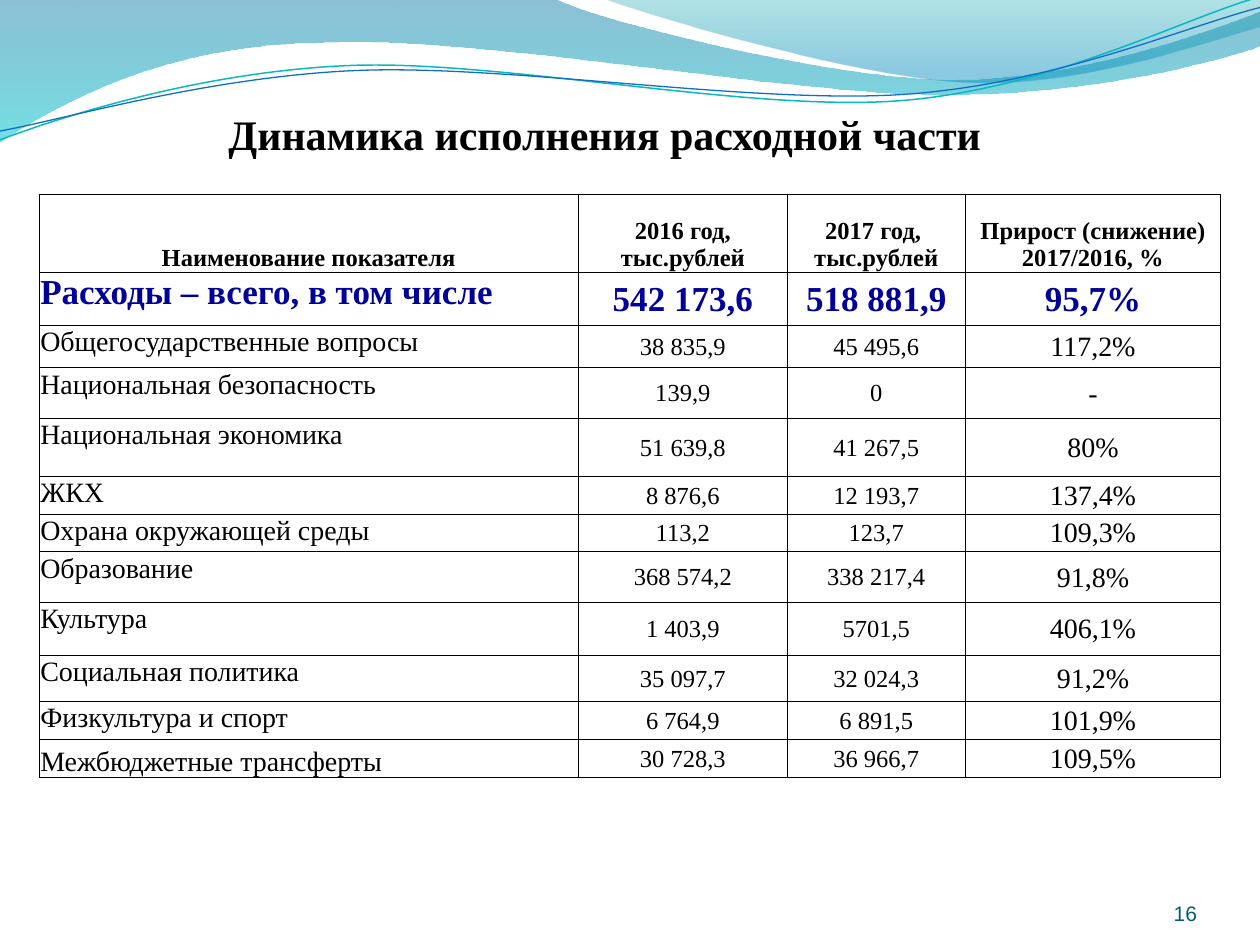
"""Build the slide on the execution of budget expenditure."""
import math

from lxml import etree
from pptx import Presentation
from pptx import util as u
from pptx.dml.color import RGBColor
from pptx.enum import text
from pptx.oxml.ns import qn

COLS, ROWS = 1000, 750
CELL = u.Inches(10) // COLS
SERIF, SANS = "Times New Roman", "Arial"
BLACK, NAVY = RGBColor(0, 0, 0), RGBColor(0x00, 0x00, 0x99)
PAGE = RGBColor(0x04, 0x5D, 0x75)
DEEP, CYAN = RGBColor(0x00, 0x74, 0xA1), RGBColor(0x00, 0xC6, 0xCF)
TEAL, SKY = RGBColor(0x00, 0xA1, 0xA9), RGBColor(0x00, 0x8B, 0xBF)
TURQUOISE, BLUE = RGBColor(0x0A, 0xB8, 0xBF), RGBColor(0x0F, 0x6F, 0xC6)
LEFT, CENTER, RIGHT, JUSTIFY = (getattr(text.PP_ALIGN, n) for n in
                                ("LEFT", "CENTER", "RIGHT", "JUSTIFY"))
TOP, MIDDLE, BOTTOM = (getattr(text.MSO_ANCHOR, n) for n in ("TOP", "MIDDLE", "BOTTOM"))

WAVES = [
    ([(0, -1), (440, -1), (476, 17, 664, 63, 758, 63), (853, 63, 958, 26, 1000, 9),
      (1001, 36), (983, 44, 870, 76, 746, 75), (622, 75, 382, 28, 257, 34),
      (129, 35, 46, 83, -1, 113), (0, -1)], [(0, DEEP, 45), (1, CYAN, 55)]),
    ([(479, -1), (509, 11, 682, 62, 769, 65), (856, 69, 961, 32, 1000, 21), (1000, 0),
      (479, -1)], [(0, TEAL, 30), (0.8, SKY, 45)]),
]
TILT = -2.7
LINES = [
    ([(0, 111), (48, 93, 158, 57, 277, 52), (395, 47, 593, 89, 713, 80),
      (833, 71, 938, 15, 998, -2)], (499, 57), TURQUOISE, 0.85),
    ([(0, 104), (47, 96, 164, 61, 283, 56), (403, 51, 597, 83, 717, 75),
      (836, 67, 941, 21, 1000, 6)], (500, 58), BLUE, 0.75),
]
TABLE_AT = (31, 154)
COL_WIDTHS = [428, 166, 141, 203]
ROW_HEIGHTS = [62, 42, 34, 40, 46, 30, 30, 40, 42, 37, 30, 30]
DATA = [
    ["Наименование показателя", "2016 год, тыс.рублей", "2017 год, \nтыс.рублей",
     "Прирост (снижение) 2017/2016, %"],
    ["Расходы – всего, в том числе", "542 173,6", "518 881,9", "95,7%"],
    ["Общегосударственные вопросы", "38 835,9", "45 495,6", "117,2%"],
    ["Национальная безопасность", "139,9", "0", "-"],
    ["Национальная экономика", "51 639,8", "41 267,5", "80%"],
    ["ЖКХ", "8 876,6", "12 193,7", "137,4%"],
    ["Охрана окружающей среды", "113,2", "123,7", "109,3%"],
    ["Образование", "368 574,2", "338 217,4", "91,8%"],
    ["Культура", "1 403,9", "5701,5", "406,1%"],
    ["Социальная политика", "35 097,7", "32 024,3", "91,2%"],
    ["Физкультура и спорт", "6 764,9", "6 891,5", "101,9%"],
    ["Межбюджетные трансферты", "30 728,3", "36 966,7", "109,5%"],
]


def set_attrs(obj, values):
    """Set every attribute in a dict of values."""
    for name, value in values.items():
        setattr(obj, name, value)


def write(tf, content, align, color, **font):
    """Fill a text frame, one paragraph a line."""
    tf.text = content
    for p in tf.paragraphs:
        p.alignment = align
        for r in p.runs:
            set_attrs(r.font, font)
            r.font.color.rgb = color


def turn(points, center, degrees):
    """Turn points clockwise about a center."""
    (cx, cy), a = center, math.radians(degrees)
    return [(cx + (x - cx) * math.cos(a) - (y - cy) * math.sin(a),
             cy + (x - cx) * math.sin(a) + (y - cy) * math.cos(a)) for x, y in points]


def add_curve(s, path, close, center=(0, 0), tilt=0):
    """Draw a path of corners and cubic curves as a freeform."""
    flat = [part[i:i + 2] for part in path for i in range(0, len(part), 2)]
    points = [(round(x * CELL), round(y * CELL)) for x, y in turn(flat, center, -tilt)]
    builder = s.shapes.build_freeform(*points[0])
    builder.add_line_segments(points[1:], close=close)
    sp = builder.convert_to_shape()
    sp.shadow.inherit = False
    sp.rotation = tilt
    segments = iter(list(sp._element.spPr.iter(qn("a:lnTo"))))
    for part in path[1:]:
        first = next(segments)
        if len(part) == 6:
            first.tag = qn("a:cubicBezTo")
            for _ in range(2):
                extra = next(segments)
                first.append(extra[0])
                extra.getparent().remove(extra)
    return sp


def add_wave(s, path, stops):
    """Add a closed wave with a translucent vertical gradient."""
    sp = add_curve(s, path, True)
    sp.line.fill.background()
    sp.fill.gradient()
    sp.fill.gradient_angle = 270
    for stop, (position, color, _) in zip(sp.fill.gradient_stops, stops):
        stop.position = position
        stop.color.rgb = color
    for clr, (_, _, opacity) in zip(sp._element.spPr.iter(qn("a:srgbClr")), stops):
        etree.SubElement(clr, qn("a:alpha"), val=str(opacity * 1000))


def add_line(s, path, center, color, width):
    """Add an open tilted curve."""
    sp = add_curve(s, path, False, center, TILT)
    sp.fill.background()
    sp.line.color.rgb = color
    sp.line.width = u.Pt(width)


def add_label(s, box, content, align, anchor, color, **font):
    """Add a text box without margins."""
    tf = s.shapes.add_textbox(*(v * CELL for v in box)).text_frame
    set_attrs(tf, dict(word_wrap=True, vertical_anchor=anchor, margin_left=0,
                       margin_top=0, margin_right=0, margin_bottom=0))
    write(tf, content, align, color, **font)


def add_borders(cell):
    """Give a cell thin black borders."""
    tc_pr = cell._tc.get_or_add_tcPr()
    for side in ("lnL", "lnR", "lnT", "lnB"):
        ln = etree.SubElement(tc_pr, qn(f"a:{side}"), w=str(u.Pt(0.5)))
        fill = etree.SubElement(ln, qn("a:solidFill"))
        etree.SubElement(fill, qn("a:srgbClr"), val=str(BLACK))


def cell_format(row, col):
    """Return alignment, anchor, size and colour for a table cell."""
    if row == 0:
        return CENTER, BOTTOM, 14, BLACK
    last = row == len(DATA) - 1
    align, anchor = CENTER, MIDDLE
    if col == 0:
        align = LEFT if row == 1 or last else JUSTIFY
        anchor = BOTTOM if last else TOP
    if row == 1:
        return align, anchor, 20, NAVY
    return align, anchor, 16 if col in (0, 3) else 14, BLACK


def add_budget_table(s):
    """Add the table of expenditure by section."""
    size = sum(COL_WIDTHS), sum(ROW_HEIGHTS)
    table = s.shapes.add_table(len(DATA), len(COL_WIDTHS),
                               *(v * CELL for v in TABLE_AT + size)).table
    set_attrs(table, dict(first_row=False, horz_banding=False))
    for column, width in zip(table.columns, COL_WIDTHS):
        column.width = width * CELL
    for i, (row, height) in enumerate(zip(table.rows, ROW_HEIGHTS)):
        row.height = height * CELL
        for j, cell in enumerate(row.cells):
            align, anchor, points, color = cell_format(i, j)
            margin = CELL if i else 0
            add_borders(cell)
            cell.fill.background()
            set_attrs(cell, dict(vertical_anchor=anchor, margin_left=margin,
                                 margin_top=margin, margin_right=margin, margin_bottom=0))
            write(cell.text_frame, DATA[i][j], align, color,
                  name=SERIF, size=u.Pt(points), bold=i < 2)


def main():
    """Build and save the slide."""
    prs = Presentation()
    prs.slide_width, prs.slide_height = COLS * CELL, ROWS * CELL
    s = prs.slides.add_slide(prs.slide_layouts[6])
    for wave in WAVES:
        add_wave(s, *wave)
    for line in LINES:
        add_line(s, *line)
    add_label(s, (0, 86, 960, 86), "Динамика исполнения расходной части", CENTER, TOP,
              BLACK, name=SERIF, size=u.Pt(24), bold=True)
    add_label(s, (717, 683, 233, 52), "16", RIGHT, BOTTOM, PAGE, name=SANS, size=u.Pt(12))
    add_budget_table(s)
    prs.save("out.pptx")


if __name__ == "__main__":
    main()
